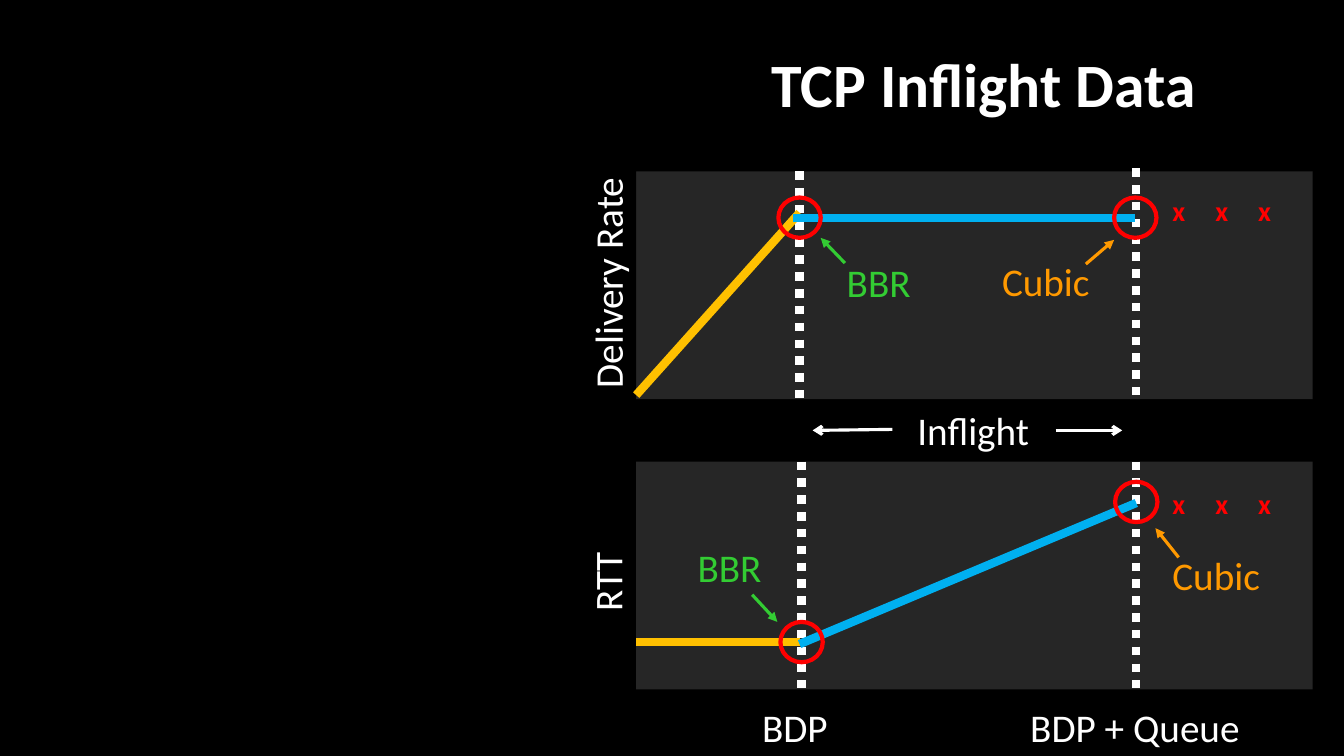
"""Build the TCP inflight data slide."""
from dataclasses import dataclass

from lxml.etree import SubElement
from pptx import Presentation
from pptx.dml.color import RGBColor
from pptx.enum.dml import MSO_LINE_DASH_STYLE as Dash
from pptx.enum.shapes import MSO_CONNECTOR as Connector, MSO_SHAPE as Shape
from pptx.enum.text import MSO_ANCHOR as Anchor, MSO_AUTO_SIZE as AutoSize, PP_ALIGN as Align
from pptx.oxml.ns import qn
from pptx.util import Inches, Pt


@dataclass(frozen=True)
class Theme:
    """Colours, type sizes and line widths of the slide."""
    font: str = "Calibri"
    background: str = "000000"
    panel: str = "262626"
    text: str = "FFFFFF"
    alert: str = "FF0000"
    rising: str = "FFC000"
    queueing: str = "00B0F0"
    bbr: str = "33CC33"
    cubic: str = "FF9900"
    title_size: int = 44
    label_size: int = 28
    loss_size: int = 20
    curve_width: float = 6
    ring_width: float = 3
    arrow_width: float = 2.25


THEME = Theme()
PANEL_LEFT, PANEL_WIDTH, PANEL_HEIGHT = 6.31, 6.71, 2.26
DIVIDER_LENGTH = 2.25
QUEUE_X = 11.27
LABEL_HEIGHT = 0.57
LOSS_LEFT, LOSS_STEP, LOSS_COUNT = 11.53, 0.425, 3
RING_WIDTH, RING_HEIGHT = 0.42, 0.4


def color(value):
    """Turn a hexadecimal string into a colour."""
    return RGBColor.from_string(value)


def add_text(slide, text, box, size=THEME.label_size, ink=THEME.text,
             bold=False, fill=None, rotation=0):
    """Add a one-line text box and return it."""
    shape = slide.shapes.add_textbox(*map(Inches, box))
    shape.rotation = rotation
    if fill:
        shape.fill.solid()
        shape.fill.fore_color.rgb = color(fill)
    frame = shape.text_frame
    frame.word_wrap = False
    frame.auto_size = AutoSize.SHAPE_TO_FIT_TEXT
    run = frame.paragraphs[0].add_run()
    run.text = text
    run.font.name = THEME.font
    run.font.size = Pt(size)
    run.font.bold = bold
    run.font.color.rgb = color(ink)
    return shape


def add_title(slide, text):
    """Add the right-aligned slide title."""
    shape = add_text(slide, text, (5.11, 0.14, 6.85, 1.45), THEME.title_size, bold=True)
    frame = shape.text_frame
    frame.auto_size = AutoSize.NONE
    frame.word_wrap = True
    frame.vertical_anchor = Anchor.MIDDLE
    paragraph = frame.paragraphs[0]
    paragraph.alignment = Align.RIGHT
    paragraph.line_spacing = 0.9


def add_line(slide, start, end, ink, width=THEME.curve_width, dash=None, head=None):
    """Add a straight line, dashed or with an arrowhead at its end if asked."""
    connector = slide.shapes.add_connector(
        Connector.STRAIGHT, *map(Inches, (*start, *end)))
    connector.line.color.rgb = color(ink)
    connector.line.width = Pt(width)
    if dash:
        connector.line.dash_style = dash
    properties = connector._element.spPr
    if head:
        SubElement(properties.find(qn("a:ln")), qn("a:tailEnd"), type=head)
    SubElement(properties, qn("a:effectLst"))


def add_panel(slide, top, label, label_box, dividers, loss_top):
    """Add a plot area with its axis label, dotted dividers and loss marks."""
    panel = slide.shapes.add_shape(
        Shape.RECTANGLE, *map(Inches, (PANEL_LEFT, top, PANEL_WIDTH, PANEL_HEIGHT)))
    panel.shadow.inherit = False
    panel.fill.solid()
    panel.fill.fore_color.rgb = color(THEME.panel)
    panel.line.fill.background()
    add_text(slide, label, label_box, fill=THEME.background, rotation=270)
    for x, y in dividers:
        add_line(slide, (x, y), (x, y + DIVIDER_LENGTH), THEME.text, dash=Dash.ROUND_DOT)
    for index in range(LOSS_COUNT):
        box = (LOSS_LEFT + index * LOSS_STEP, loss_top, 0.33, 0.44)
        add_text(slide, "x", box, THEME.loss_size, THEME.alert, bold=True, fill=THEME.panel)


def add_callout(slide, name, ink, label_box, ring_corner, arrow):
    """Ring an operating point and name it with an arrow."""
    add_text(slide, name, label_box, ink=ink)
    ring = slide.shapes.add_shape(
        Shape.OVAL, *map(Inches, (*ring_corner, RING_WIDTH, RING_HEIGHT)))
    ring.shadow.inherit = False
    ring.fill.background()
    ring.line.color.rgb = color(THEME.alert)
    ring.line.width = Pt(THEME.ring_width)
    add_line(slide, *arrow, ink, THEME.arrow_width, head="triangle")


def main():
    """Build and save the slide."""
    presentation = Presentation()
    presentation.slide_width = Inches(13.33)
    presentation.slide_height = Inches(7.5)
    slide = presentation.slides.add_slide(presentation.slide_layouts[6])
    slide.background.fill.solid()
    slide.background.fill.fore_color.rgb = color(THEME.background)

    add_title(slide, "TCP Inflight Data")
    for text, left, width in (("BDP", 7.46, 0.86), ("BDP + Queue", 10.12, 2.3)):
        add_text(slide, text, (left, 6.93, width, LABEL_HEIGHT), fill=THEME.background)

    add_panel(slide, 4.58, "RTT", (5.62, 5.48, 0.8, LABEL_HEIGHT),
              ((7.95, 4.58), (QUEUE_X, 4.58)), 4.78)
    add_line(slide, (PANEL_LEFT, 6.37), (7.93, 6.37), THEME.rising)
    add_line(slide, (7.93, 6.39), (QUEUE_X, 4.99), THEME.queueing)

    add_panel(slide, 1.7, "Delivery Rate", (4.87, 2.51, 2.31, LABEL_HEIGHT),
              ((7.93, 1.7), (QUEUE_X, 1.67)), 1.87)
    add_line(slide, (PANEL_LEFT, 3.92), (7.93, 2.11), THEME.rising)
    add_line(slide, (7.87, 2.16), (11.26, 2.16), THEME.queueing)

    add_text(slide, "Inflight", (9, 3.98, 1.32, LABEL_HEIGHT), fill=THEME.background)
    for start, end in (((10.47, 4.27), (11.13, 4.27)), ((8.85, 4.26), (8.06, 4.27))):
        add_line(slide, start, end, THEME.text, THEME.arrow_width, head="arrow")

    callouts = (
        ("BBR", THEME.bbr, (8.3, 2.51), 0.93, (7.72, 1.96), ((8.38, 2.61), (8.14, 2.36))),
        ("Cubic", THEME.cubic, (9.84, 2.5), 1.17, (11.05, 1.96), ((10.77, 2.62), (11.05, 2.38))),
        ("Cubic", THEME.cubic, (11.53, 5.42), 1.17, (11.06, 4.78), ((11.69, 5.53), (11.46, 5.24))),
        ("BBR", THEME.bbr, (6.82, 5.34), 0.93, (7.74, 6.17), ((7.46, 5.9), (7.71, 6.17))),
    )
    for name, ink, corner, width, ring_corner, arrow in callouts:
        add_callout(slide, name, ink, (*corner, width, LABEL_HEIGHT), ring_corner, arrow)

    presentation.save("out.pptx")


if __name__ == "__main__":
    main()
